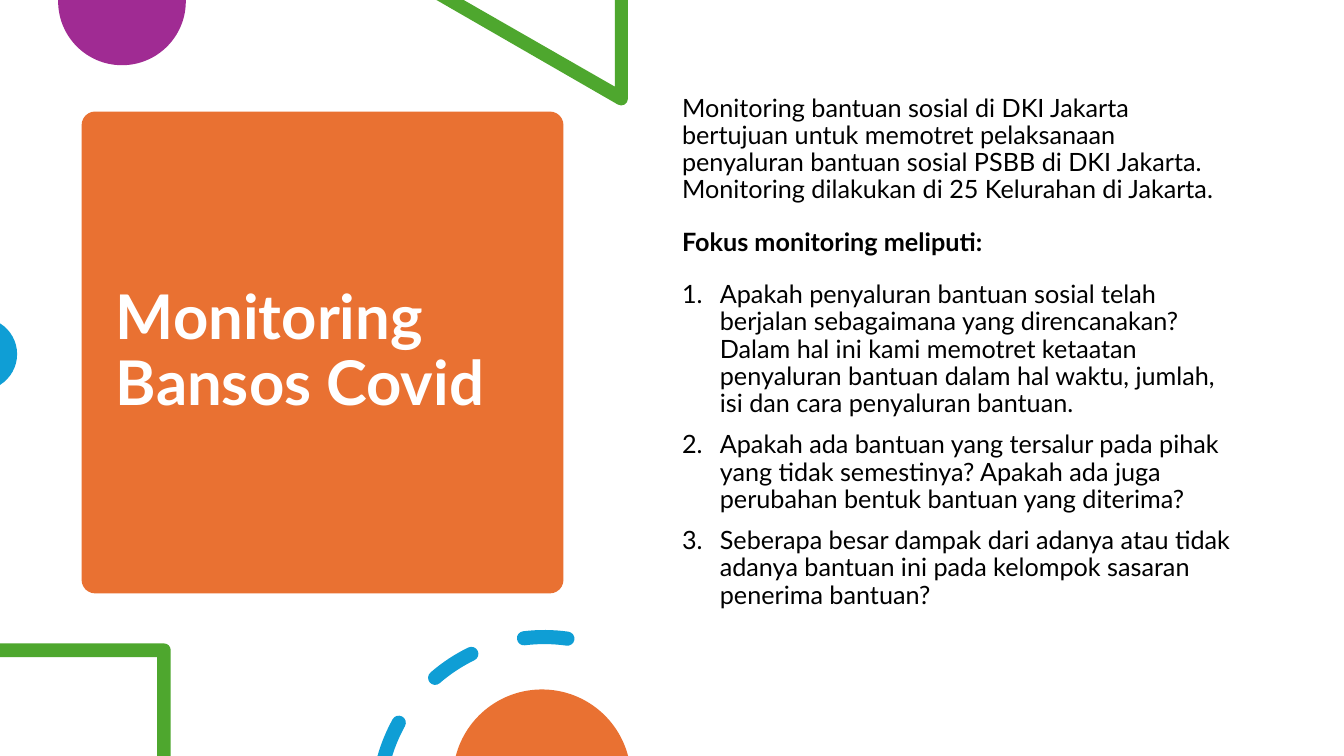
import math

from lxml import etree
from pptx import Presentation
from pptx import util as u
from pptx.dml import color
from pptx.enum import shapes, text
from pptx.oxml import ns

PX = 3048
WIDTH, HEIGHT = 4000, 2250
FONT = "Lato"
ORANGE, GREEN, BLUE, PURPLE = "E97132", "4EA72E", "0F9ED5", "A02B93"
WHITE, BLACK = "FFFFFF", "000000"

TITLE = "Monitoring Bansos Covid"
INTRO = (
    "Monitoring bantuan sosial di DKI Jakarta bertujuan untuk memotret "
    "pelaksanaan penyaluran bantuan sosial PSBB di DKI Jakarta. "
    "Monitoring dilakukan di 25 Kelurahan di Jakarta."
)
FOCUS = "Fokus monitoring meliputi:"
QUESTIONS = [
    "Apakah penyaluran bantuan sosial telah berjalan sebagaimana yang "
    "direncanakan? Dalam hal ini kami memotret ketaatan penyaluran bantuan "
    "dalam hal waktu, jumlah, isi dan cara penyaluran bantuan.",
    "Apakah ada bantuan yang tersalur pada pihak yang tidak semestinya? "
    "Apakah ada juga perubahan bentuk bantuan yang diterima?",
    "Seberapa besar dampak dari adanya atau tidak adanya bantuan ini pada "
    "kelompok sasaran penerima bantuan?",
]


def px(value):
    return u.Emu(round(value * PX))


def rgb(value):
    return color.RGBColor.from_string(value)


def paint(shape, fill):
    shape.shadow.inherit = False
    shape.fill.solid()
    shape.fill.fore_color.rgb = rgb(fill)
    shape.line.fill.background()


def place(shape, box):
    shape.left, shape.top, shape.width, shape.height = map(px, box)


def style(para, size, hue, bold=False):
    para.alignment = text.PP_ALIGN.LEFT
    para.line_spacing = 0.9
    for span in para.runs:
        span.font.name = FONT
        span.font.size = u.Pt(size)
        span.font.bold = bold
        span.font.color.rgb = rgb(hue)


def set_bullet(para, numbered):
    props = para._p.get_or_add_pPr()
    indent = u.Emu(342900) if numbered else 0
    props.set("marL", str(indent))
    props.set("indent", str(-indent))
    if numbered:
        etree.SubElement(props, ns.qn("a:buFont"), typeface="+mj-lt")
        etree.SubElement(props, ns.qn("a:buAutoNum"), type="arabicPeriod")
    else:
        etree.SubElement(props, ns.qn("a:buNone"))


def polar(x, y, radius, degrees):
    angle = math.radians(degrees)
    return x + radius * math.cos(angle), y + radius * math.sin(angle)


def curves(x, y, radius, start, end, pieces=1):
    step = (end - start) / pieces
    handle = 4 / 3 * math.tan(math.radians(step / 4))
    reach, turn = radius * math.hypot(1, handle), math.degrees(math.atan(handle))
    result = []
    for i in range(pieces):
        first, last = start + i * step, start + (i + 1) * step
        result.append((polar(x, y, reach, first + turn),
                       polar(x, y, reach, last - turn),
                       polar(x, y, radius, last)))
    return result


def arc(x, y, radius, start, end, pieces=1):
    return [(polar(x, y, radius, start),)] + curves(x, y, radius, start, end, pieces)


def line(*points):
    return [(point,) for point in points]


def draw_outlines(page, outlines, fill):
    builder = None
    for outline in outlines:
        points = [(px(x), px(y)) for segment in outline for x, y in segment]
        if builder is None:
            builder = page.shapes.build_freeform(*points[0], scale=1.0)
        else:
            builder.move_to(*points[0])
        builder.add_line_segments(points[1:], close=True)
    shape = builder.convert_to_shape()
    steps = shape._element.iter(ns.qn("a:moveTo"), ns.qn("a:lnTo"), ns.qn("a:close"))
    steps = iter(list(steps))
    for outline in outlines:
        for segment in outline:
            group = [next(steps) for point in segment]
            if len(group) == 3:
                group[0].tag = ns.qn("a:cubicBezTo")
                for extra in group[1:]:
                    group[0].append(extra[0])
                    extra.getparent().remove(extra)
        while (step := next(steps, None)) is not None and step.tag != ns.qn("a:close"):
            step.getparent().remove(step)
    paint(shape, fill)


def dash(x, y, radius, half, start, end):
    return (
        arc(x, y, radius + half, start, end)
        + curves(*polar(x, y, radius, end), half, end, end + 180, 2)
        + curves(x, y, radius - half, end, start)
        + curves(*polar(x, y, radius, start), half, start + 180, start + 360, 2)
    )


def cut_dash(x, y, radius, half, drop, end):
    outer, inner = [180 + math.degrees(math.asin(drop / r))
                    for r in (radius + half, radius - half)]
    return (
        arc(x, y, radius + half, outer, end)
        + curves(*polar(x, y, radius, end), half, end, end + 180, 2)
        + curves(x, y, radius - half, end, inner)
    )


def add_title_panel(page, box):
    left, top, width, height = box
    panel = page.shapes.add_shape(
        shapes.MSO_SHAPE.ROUNDED_RECTANGLE, *map(px, box))
    panel.adjustments[0] = 0.028
    paint(panel, ORANGE)
    title = page.shapes.title
    page.shapes._spTree.append(title._element)
    place(title, (left + 72, top + 33, width - 142, height - 66))
    frame = title.text_frame
    frame.text = TITLE
    frame.word_wrap = True
    frame.auto_size = text.MSO_AUTO_SIZE.NONE
    frame.vertical_anchor = text.MSO_ANCHOR.MIDDLE
    style(frame.paragraphs[0], 44, WHITE, bold=True)


def add_body(page, box):
    body = page.placeholders[1]
    page.shapes._spTree.append(body._element)
    place(body, box)
    frame = body.text_frame
    frame.text = "\n".join([INTRO, FOCUS, *QUESTIONS])
    frame.word_wrap = True
    frame.auto_size = text.MSO_AUTO_SIZE.NONE
    frame.vertical_anchor = text.MSO_ANCHOR.TOP
    for para in frame.paragraphs:
        style(para, 18, BLACK, bold=para.text == FOCUS)
        para.space_before = u.Pt(10)
        para.space_after = u.Pt(0 if para.text in QUESTIONS[:-1] else 8)
        set_bullet(para, para.text in QUESTIONS)


def add_top_decorations(page, box):
    left, top, width, height = box
    right = left + width
    draw_outlines(page, [arc(left + 363, top + 4, 190, 0, 180, 2)
                         + line((left + 173, top), (left + 553, top))], PURPLE)
    triangle = line((right, top), (right - 39, top), (right - 39, top + 258),
                    (right - 489, top), (right - 570, top))
    draw_outlines(page, [triangle + arc(right - 20, top + 294, 20, 120, 0, 2)], GREEN)
    draw_outlines(page, [arc(left - 57, top + 1054, 108, -58, 58, 2)], BLUE)


def add_bottom_decorations(page, box):
    left, top, width, height = box
    bottom = top + height
    frame = line((left, bottom - 294), (left, bottom - 335))
    frame += arc(left + 488, bottom - 315, 20, -90, 0)
    frame += line((left + 508, bottom), (left + 468, bottom), (left + 468, bottom - 294))
    draw_outlines(page, [frame], GREEN)
    ring = (left + 1620, bottom + 141, 495, 21)
    dashes = [cut_dash(*ring, 141, 209)]
    dashes += [dash(*ring, start, start + 15) for start in (229, 263)]
    draw_outlines(page, dashes, BLUE)
    draw_outlines(page, [arc(left + 1613, bottom + 67, 265, 194.6, 345.4, 2)], ORANGE)


def main():
    deck = Presentation()
    deck.slide_width, deck.slide_height = px(WIDTH), px(HEIGHT)
    page = deck.slides.add_slide(deck.slide_layouts[1])
    page.background.fill.solid()
    page.background.fill.fore_color.rgb = rgb(WHITE)
    add_title_panel(page, (243, 332, 1434, 1434))
    add_top_decorations(page, (0, 0, 1869, 1146))
    add_body(page, (2000, 269, 1725, 1606))
    add_bottom_decorations(page, (0, 1875, 1869, 375))
    deck.save("out.pptx")


if __name__ == "__main__":
    main()
